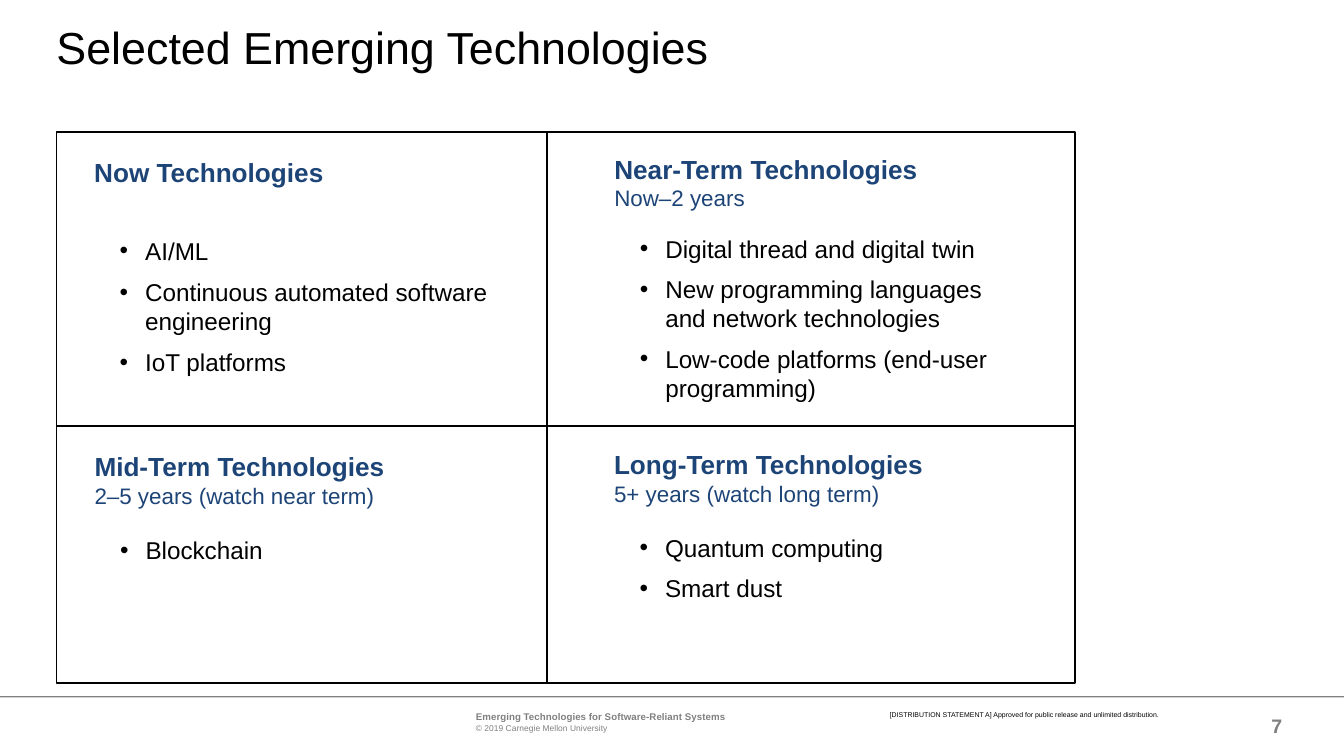
import copy
import pptx
import pptx.util
import pptx.dml.color
import pptx.enum.shapes
import pptx.enum.text
from lxml import etree

Inches, Pt = pptx.util.Inches, pptx.util.Pt
Color = pptx.dml.color.RGBColor.from_string
Shape = pptx.enum.shapes.MSO_SHAPE
Align = pptx.enum.text.PP_ALIGN
Anchor = pptx.enum.text.MSO_ANCHOR
qn = pptx.oxml.ns.qn

SIZE = (10, 10 * 9 / 16)
BREAK, PARA = "\v", "\n"
TITLE = "Selected Emerging Technologies"
# gap: points above the first bullet; step: points between bullets
CELLS = [
    {"at": (0.62, 1.08, 3.56, 1.66), "gap": 26, "step": 6.5,
     "head": ["Now Technologies"], "join": PARA,
     "items": ["AI/ML", "Continuous automated software engineering",
               "IoT platforms"]},
    {"at": (4.49, 1.06, 3.24, 1.66), "gap": 12, "step": 6,
     "head": ["Near-Term Technologies ", "Now–2 years"], "join": BREAK,
     "items": ["Digital thread and digital twin",
               "New programming languages and network technologies",
               "Low-code platforms (end-user programming)"]},
    {"at": (0.62, 3.27, 3.56, 1.71), "gap": 14, "step": 6,
     "head": ["Mid-Term Technologies", "2–5 years (watch near term)"],
     "join": PARA, "items": ["Blockchain"]},
    {"at": (4.49, 3.26, 3.04, 1.62), "gap": 14, "step": 6,
     "head": ["Long-Term Technologies", "5+ years (watch long term)"],
     "join": PARA, "items": ["Quantum computing", "Smart dust"]},
]
FRAME = (0.42, 0.98, 7.58, 4.1)
MID_X, MID_Y = 4.07, 3.17
RULE = (0, 5.18, 10, 0.01)

# (place, alignment, anchor, lines, styles)
FOOTER = [
    ((9.1, 5.25, 0.44, 0.3), Align.RIGHT, Anchor.MIDDLE, ["7"], ["page"]),
    ((3.54, 5.29, 2.92, 0.16), Align.LEFT, Anchor.TOP,
     ["Emerging Technologies for Software-Reliant Systems",
      "© 2019 Carnegie Mellon University"], ["foot", "copy"]),
    ((6.62, 5.29, 2.29, 0.06), Align.LEFT, Anchor.TOP,
     ["[DISTRIBUTION STATEMENT A] Approved for public release and "
      "unlimited distribution."], ["note"]),
]

INK, BLUE, GRAY = "000000", "1D4477", "808080"
THEME = {
    "font": "Arial",
    # size, colour, bold
    "title": (24, INK, False),
    "head": (14, BLUE, True),
    "span": (12, BLUE, False),
    "item": (13, INK, False),
    "page": (10.5, GRAY, True),
    "foot": (5.25, GRAY, True),
    "copy": (4.5, GRAY, False),
    "note": (3.75, INK, False),
}


def box(at):
    return [Inches(v) for v in at]


def clear(frame, anchor=Anchor.TOP):
    """Wrap the text and drop the margins."""
    frame.word_wrap = True
    frame.vertical_anchor = anchor
    frame.margin_left = frame.margin_right = 0
    frame.margin_top = frame.margin_bottom = 0


def bullet(para):
    props = para._p.get_or_add_pPr()
    props.set("marL", str(Inches(0.38)))
    props.set("indent", str(Inches(-0.19)))
    etree.SubElement(props, qn("a:buFont")).set("typeface", THEME["font"])
    etree.SubElement(props, qn("a:buChar")).set("char", "•")


def write(frame, text, looks, align=Align.LEFT):
    """Fill a frame, with one look for each run in turn."""
    frame.text = text
    runs = [run for para in frame.paragraphs for run in para.runs]
    for run, look in zip(runs, looks):
        size, color, bold = THEME[look]
        font = run.font
        font.name, font.size, font.bold = THEME["font"], Pt(size), bold
        font.color.rgb = Color(color)
    for para in frame.paragraphs:
        para.alignment = align
        for gap in para._p.findall(qn("a:br")):
            gap.append(copy.deepcopy(para.runs[0]._r.rPr))


def add_shape(slide, kind, at, fill=None, line=None):
    shape = slide.shapes.add_shape(kind, *box(at))
    shape.shadow.inherit = False
    if fill:
        shape.fill.solid()
        shape.fill.fore_color.rgb = Color(fill)
    else:
        shape.fill.background()
    if line:
        shape.line.color.rgb = Color(line)
        shape.line.width = Pt(1)
    else:
        shape.line.fill.background()
    return shape


def add_cell(slide, cell):
    frame = add_shape(slide, Shape.ROUNDED_RECTANGLE, cell["at"]).text_frame
    clear(frame)
    head, items = cell["head"], cell["items"]
    text = PARA.join([cell["join"].join(head)] + items)
    looks = ["head", "span"][:len(head)] + ["item"] * len(items)
    write(frame, text, looks)
    for i, para in enumerate(frame.paragraphs[-len(items):]):
        para.space_before = Pt(cell["step"] if i else cell["gap"])
        bullet(para)


def add_line(slide, start, end, width):
    line = slide.shapes.add_connector(
        pptx.enum.shapes.MSO_CONNECTOR.STRAIGHT, *box(start + end))
    line.line.color.rgb = Color(INK)
    line.line.width = Pt(width)
    etree.SubElement(line._element.spPr, qn("a:effectLst"))


def main():
    deck = pptx.Presentation()
    deck.slide_width, deck.slide_height = box(SIZE)
    slide = deck.slides.add_slide(deck.slide_layouts[5])

    title = slide.shapes.title
    title.left, title.top, title.width, title.height = box(
        (0.42, 0.19, 8.5, 0.7))
    clear(title.text_frame)
    write(title.text_frame, TITLE, ["title"])
    title.text_frame.paragraphs[0].line_spacing = 0.9

    for at, align, anchor, lines, looks in FOOTER:
        frame = slide.shapes.add_textbox(*box(at)).text_frame
        clear(frame, anchor)
        write(frame, BREAK.join(lines), looks, align)
    add_shape(slide, Shape.RECTANGLE, RULE, fill=GRAY)

    for cell in CELLS:
        add_cell(slide, cell)

    left, top, width, height = FRAME
    add_shape(slide, Shape.RECTANGLE, FRAME, line=INK)
    add_line(slide, (left, MID_Y), (left + width, MID_Y), 1)
    add_line(slide, (MID_X, top), (MID_X, top + height), 1.25)
    deck.save("out.pptx")


if __name__ == "__main__":
    main()
